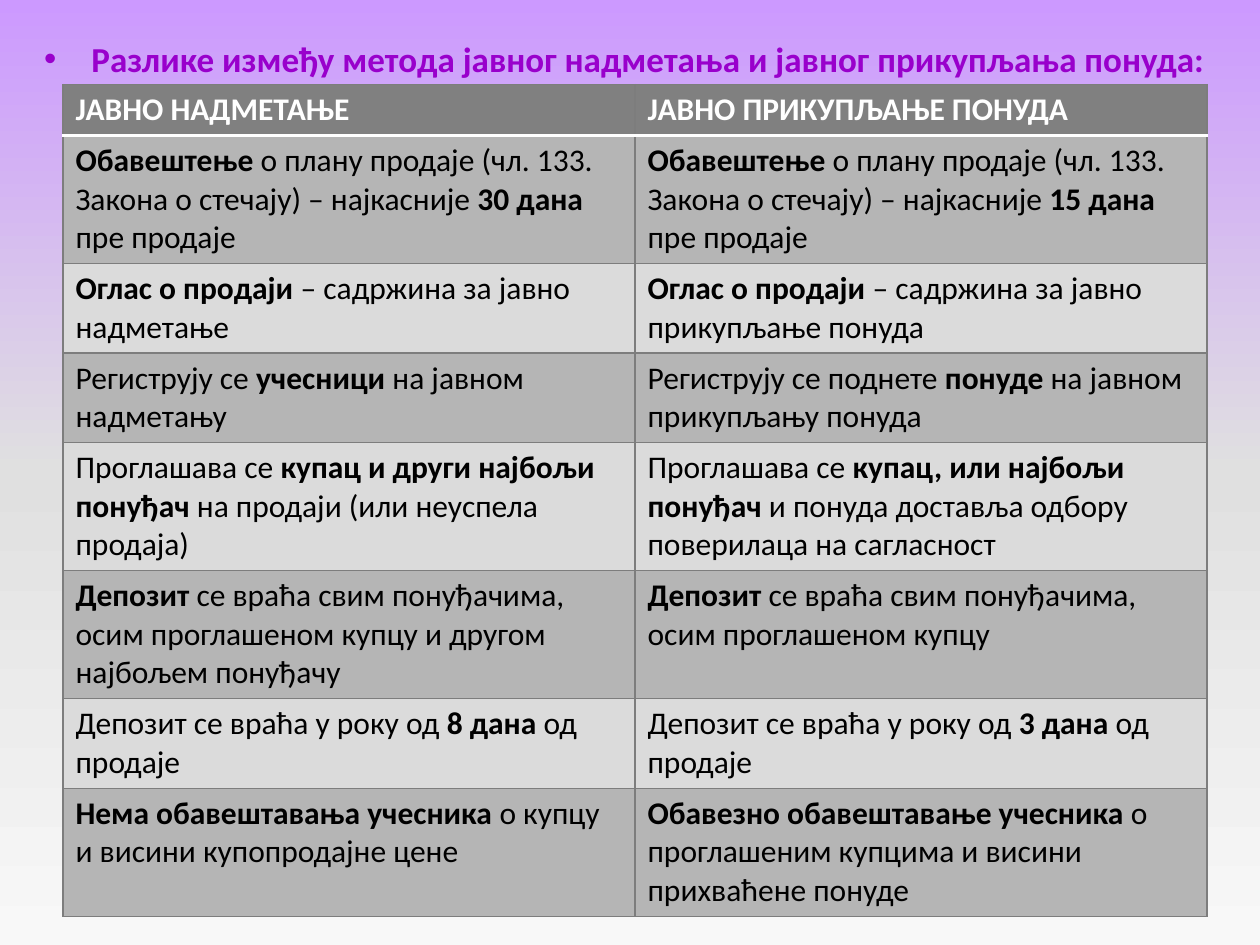
from copy import deepcopy

from lxml import etree
from pptx import Presentation
from pptx.dml.color import RGBColor
from pptx.enum.text import MSO_AUTO_SIZE
from pptx.oxml.ns import qn
from pptx.util import Inches, Pt

NO_AUTOFIT = MSO_AUTO_SIZE.NONE
FONT = "Calibri"
COLORS = {
    "heading": "9900CC", "header": "808080", "header_text": "FFFFFF",
    "dark_row": "B5B5B5", "light_row": "DBDBDB", "text": "000000",
    "grid": "7D7D7D", "header_rule": "FFFFFF",
}
BACKGROUND = [(0, "CC99FF"), (0.5, "E0E0E0"), (1, "F8F8F8")]

HEADING = "Разлике између метода јавног надметања и јавног прикупљања понуда:"
# Each row: number of text lines, left cell, right cell; *...* marks bold
ROWS = [
    (1, "*ЈАВНО НАДМЕТАЊЕ*", "*ЈАВНО ПРИКУПЉАЊЕ ПОНУДА*"),
    (3, "*Обавештење* о плану продаје (чл. 133. Закона о стечају) – најкасније *30 дана *пре продаје",
        "*Обавештење *о плану продаје (чл. 133. Закона о стечају) – најкасније *15 дана *пре продаје"),
    (2, "*Оглас о продаји *– садржина за јавно надметање",
        "*Оглас о продаји *– садржина за јавно прикупљање понуда"),
    (2, "Региструју се *учесници* на јавном надметању",
        "Региструју се поднете *понуде *на јавном прикупљању понуда"),
    (3, "Проглашава се *купац и други најбољи понуђач *на продаји (или неуспела продаја)",
        "Проглашава се *купац, или најбољи понуђач* и понуда доставља одбору поверилаца на сагласност"),
    (3, "*Депозит* се враћа свим понуђачима, осим проглашеном купцу и другом најбољем понуђачу",
        "*Депозит* се враћа свим понуђачима, осим проглашеном купцу"),
    (2, "Депозит се враћа у року од *8 дана* од продаје",
        "Депозит се враћа у року од *3 дана* од продаје"),
    (3, "*Нема обавештавања учесника *о купцу и висини купопродајне цене",
        "*Обавезно обавештавање учесника *о проглашеним купцима и висини прихваћене понуде"),
]
TABLE_LEFT, TABLE_TOP, COLUMN_WIDTH = 0.5, 0.67, 4.54
LINE_HEIGHT, CELL_PADDING = 0.305, 0.1


def add_runs(paragraph, marked, size, color):
    for index, part in enumerate(marked.split("*")):
        if part:
            run = paragraph.add_run()
            run.text = part
            run.font.name = FONT
            run.font.size = Pt(size)
            run.font.bold = index % 2 == 1
            run.font.color.rgb = RGBColor.from_string(COLORS[color])


def add_border(cell, side, color, width):
    line = etree.SubElement(cell._tc.get_or_add_tcPr(), qn("a:ln" + side), w=str(Pt(width)))
    fill = etree.SubElement(line, qn("a:solidFill"))
    etree.SubElement(fill, qn("a:srgbClr"), val=COLORS[color])


def paint_background(slide):
    fill = slide.background.fill
    fill.gradient()
    fill.gradient_angle = 270
    last_stop = fill.gradient_stops[-1]._gs
    last_stop.addprevious(deepcopy(last_stop))
    for stop, (position, color) in zip(fill.gradient_stops, BACKGROUND):
        stop.position = position
        stop.color.rgb = RGBColor.from_string(color)


def add_heading(slide):
    title, heading = slide.placeholders
    title._element.getparent().remove(title._element)
    heading.left, heading.top = Inches(0.25), Inches(0.25)
    heading.width, heading.height = Inches(9.58), Inches(7.08)
    heading.text_frame.auto_size = NO_AUTOFIT
    add_runs(heading.text_frame.paragraphs[0], f"*{HEADING}*", 20, "heading")


def add_comparison(slide):
    heights = [CELL_PADDING + LINE_HEIGHT * lines for lines, *_ in ROWS]
    table = slide.shapes.add_table(
        len(ROWS), 2, Inches(TABLE_LEFT), Inches(TABLE_TOP),
        Inches(2 * COLUMN_WIDTH), Inches(sum(heights))).table
    for column in table.columns:
        column.width = Inches(COLUMN_WIDTH)
    for r, (_, *texts) in enumerate(ROWS):
        table.rows[r].height = Inches(heights[r])
        row_fill = "header" if r == 0 else "dark_row" if r % 2 else "light_row"
        for c, text in enumerate(texts):
            cell = table.cell(r, c)
            add_runs(cell.text_frame.paragraphs[0], text, 18, "text" if r else "header_text")
            for side in "LRTB":
                # White rule between the header and the first row
                ruled = (r, side) in ((0, "B"), (1, "T"))
                add_border(cell, side, *(("header_rule", 2) if ruled else ("grid", 0.75)))
            cell.fill.solid()
            cell.fill.fore_color.rgb = RGBColor.from_string(COLORS[row_fill])


def main():
    deck = Presentation()
    deck.slide_width, deck.slide_height = Inches(10), Inches(7.5)
    slide = deck.slides.add_slide(deck.slide_layouts[1])
    paint_background(slide)
    add_heading(slide)
    add_comparison(slide)
    deck.save("out.pptx")


if __name__ == "__main__":
    main()
